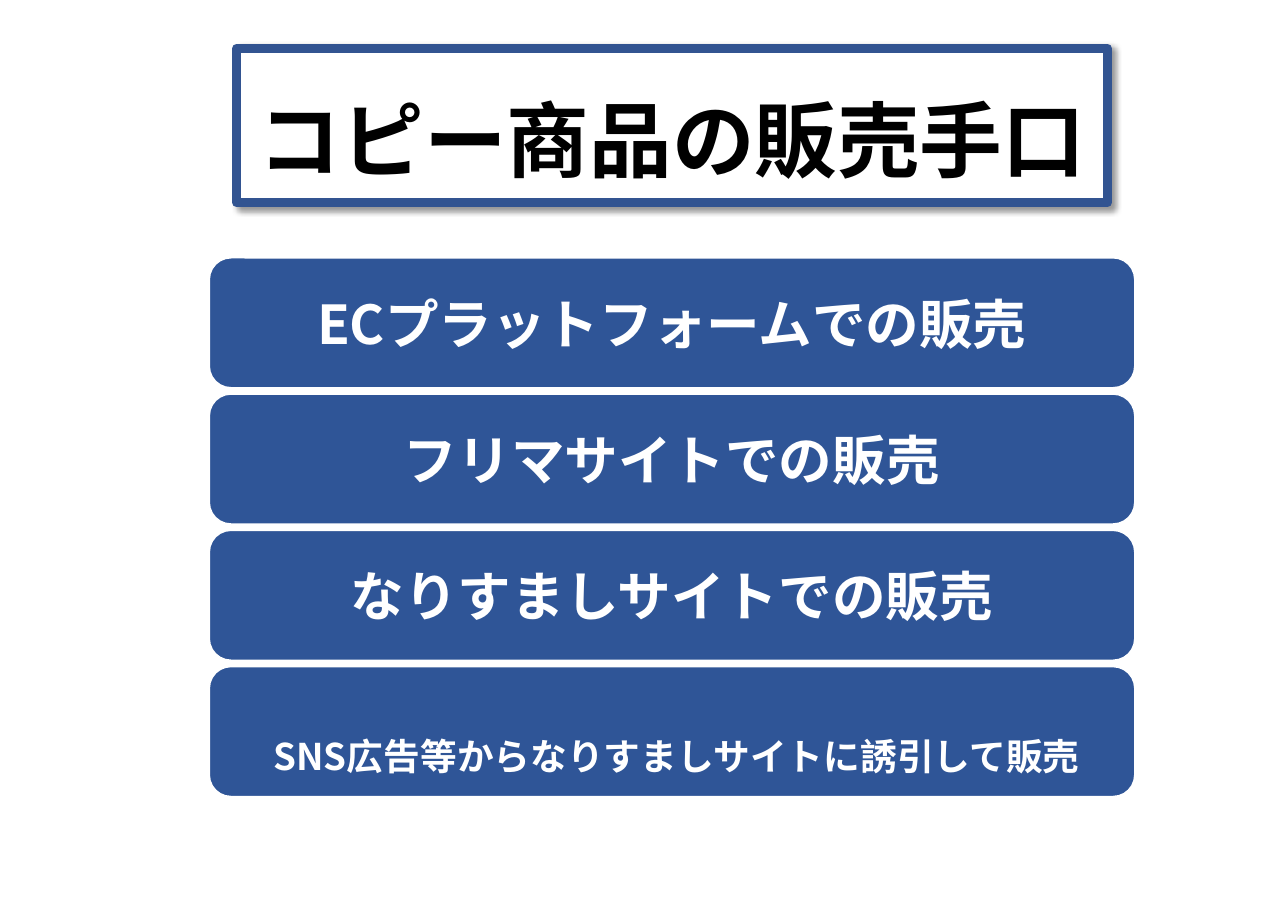
from lxml import etree
from pptx import Presentation
from pptx.dml.color import RGBColor
from pptx.enum.shapes import MSO_SHAPE
from pptx.enum.text import MSO_ANCHOR, PP_ALIGN
from pptx.oxml import parse_xml
from pptx.oxml.ns import qn
from pptx.util import Inches, Pt

RECT, ROUNDED = MSO_SHAPE.RECTANGLE, MSO_SHAPE.ROUNDED_RECTANGLE
MIDDLE, CENTER = MSO_ANCHOR.MIDDLE, PP_ALIGN.CENTER

THEME = {
    "font": "Noto Sans CJK JP",
    "white": "FFFFFF", "black": "000000", "bar": "2F5597", "frame": "325491",
    "title": 54, "item": 35, "long_item": 24,
}

SHADOW = """<a:effectLst xmlns:a="http://schemas.openxmlformats.org/drawingml/2006/main">
<a:outerShdw blurRad="50800" dist="38100" dir="2700000" algn="tl" rotWithShape="0">
<a:srgbClr val="000000"><a:alpha val="40000"/></a:srgbClr></a:outerShdw></a:effectLst>"""


def add_box(kind, at, fill, line, line_width):
    sp = s.shapes.add_shape(kind, *(Inches(v) for v in at))
    sp.shadow.inherit = False
    sp.fill.solid()
    sp.fill.fore_color.rgb = RGBColor.from_string(THEME[fill])
    sp.line.color.rgb = RGBColor.from_string(THEME[line])
    sp.line.width = Pt(line_width)
    return sp


def set_text(sp, text, size, color, left=0.1, top=0.05, bottom=0.05):
    tf = sp.text_frame
    tf.word_wrap = True
    tf.vertical_anchor = MIDDLE
    tf.margin_left, tf.margin_right = Inches(left), Inches(0.1)
    tf.margin_top, tf.margin_bottom = Inches(top), Inches(bottom)
    p = tf.paragraphs[0]
    p.alignment = CENTER
    r = p.add_run()
    r.text = text
    r.font.size = Pt(THEME[size])
    r.font.bold = True
    r.font.name = THEME["font"]
    r.font.color.rgb = RGBColor.from_string(THEME[color])
    etree.SubElement(r.font._element, qn("a:ea"), typeface=THEME["font"])


prs = Presentation()
prs.slide_width, prs.slide_height = Inches(11.69), Inches(8.27)
s = prs.slides.add_slide(prs.slide_layouts[6])

# Sales methods, stacked at an equal pitch
methods = [
    ("ECプラットフォームでの販売", "item", {}),
    ("フリマサイトでの販売", "item", {}),
    ("なりすましサイトでの販売", "item", {}),
    ("SNS広告等からなりすましサイトに誘引して販売", "long_item",
     {"left": 0.18, "top": 0.49}),
]
for i, (text, size, margins) in enumerate(methods):
    bar = add_box(ROUNDED, (1.9, 2.34 + 1.237 * i, 8.4, 1.18), "bar", "white", 1)
    set_text(bar, text, size, "white", **margins)

# Framed title with a soft shadow
title = add_box(RECT, (2.15, 0.44, 7.9, 1.4), "white", "frame", 6)
effects = title._element.spPr.find(qn("a:effectLst"))
effects.getparent().replace(effects, parse_xml(SHADOW))
set_text(title, "コピー商品の販売手口", "title", "black", top=0.24, bottom=0)

prs.save("out.pptx")
